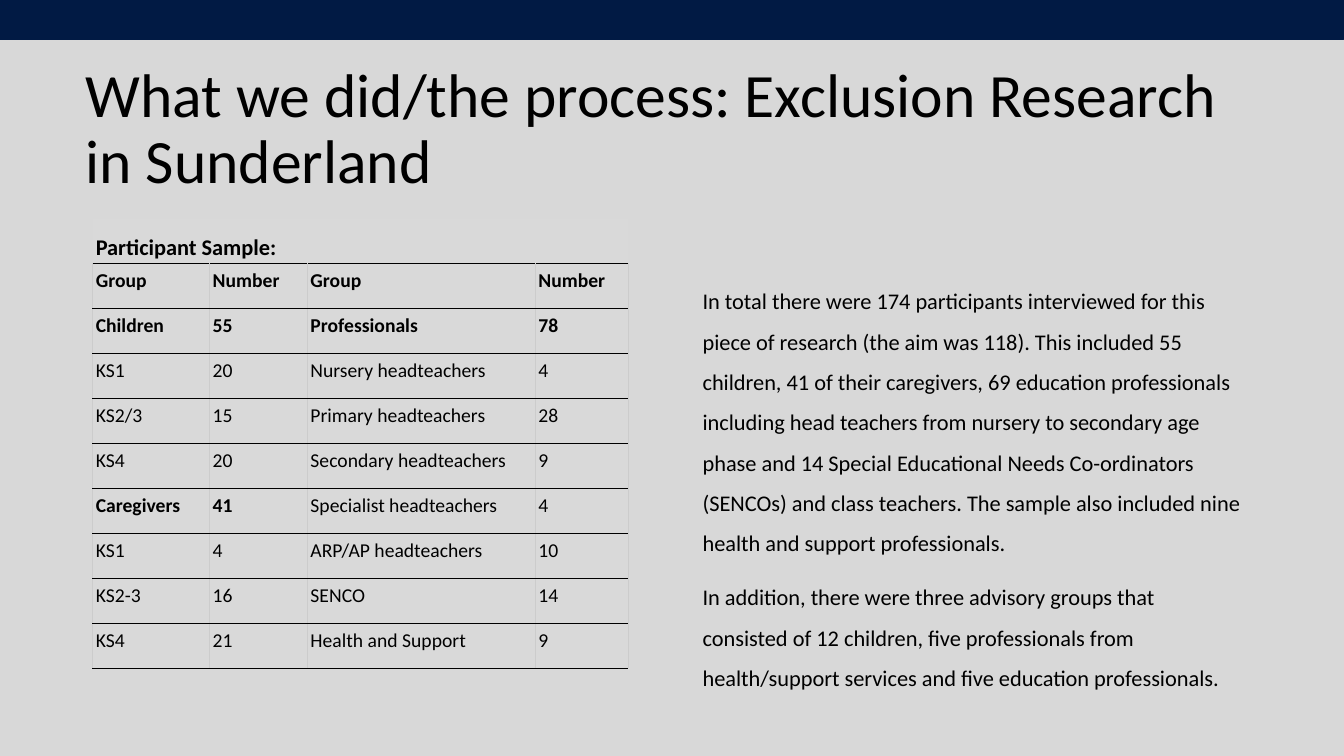
from lxml.etree import SubElement
from pptx import Presentation
from pptx.dml.color import RGBColor
from pptx.enum.shapes import MSO_SHAPE as Preset
from pptx.enum.text import MSO_ANCHOR as Anchor
from pptx.oxml import parse_xml
from pptx.oxml.ns import nsdecls, qn
from pptx.util import Inches, Pt

NAVY = RGBColor(0x01, 0x1A, 0x44)
BLACK = RGBColor(0x00, 0x00, 0x00)
PAGE_GREY = RGBColor(0xD8, 0xD8, 0xD8)
CELL_GREY = RGBColor(0xD9, 0xD9, 0xD9)
RULE_GREY = RGBColor(0xCC, 0xCC, 0xCC)
FONT = "Calibri"
PLAIN_STYLE = "{2D5ABB26-0587-4C30-8999-92F81FD0307C}"

TITLE = "What we did/the process: Exclusion Research in Sunderland"
SAMPLE_HEADING = "Participant Sample:"
SAMPLE_ROWS = [
    ("Group", "Number", "Group", "Number"),
    ("Children", "55", "Professionals", "78"),
    ("KS1", "20", "Nursery headteachers", "4"),
    ("KS2/3", "15", "Primary headteachers", "28"),
    ("KS4", "20", "Secondary headteachers", "9"),
    ("Caregivers", "41", "Specialist headteachers", "4"),
    ("KS1", "4", "ARP/AP headteachers", "10"),
    ("KS2-3", "16", "SENCO", "14"),
    ("KS4", "21", "Health and Support", "9"),
]
BOLD_WORDS = {"Group", "Number", "Children", "55", "Professionals", "78", "Caregivers", "41"}
COLUMN_WIDTHS = (1.16, 0.97, 2.26, 0.92)
SUMMARY = (
    "In total there were 174 participants interviewed for this piece of research "
    "(the aim was 118). This included 55 children, 41 of their caregivers, 69 education "
    "professionals including head teachers from nursery to secondary age phase and 14 "
    "Special Educational Needs Co-ordinators (SENCOs) and class teachers. The sample also "
    "included nine health and support professionals."
)
ADVISORY = (
    "In addition, there were three advisory groups that consisted of 12 children, five "
    "professionals from health/support services and five education professionals."
)


def write(para, text, size, spacing, bold=False, before=0, after=0):
    """Add one formatted run to a paragraph."""
    para.line_spacing = spacing
    para.space_before, para.space_after = Pt(before), Pt(after)
    span = para.add_run()
    span.text = text
    span.font.name, span.font.size, span.font.bold = FONT, Pt(size), bold
    span.font.color.rgb = BLACK


def add_text_frame(page, box, side, top, anchor=Anchor.TOP):
    """Add a wrapping text box and return its frame."""
    frame = page.shapes.add_textbox(*map(Inches, box)).text_frame
    frame.word_wrap = True
    frame.vertical_anchor = anchor
    frame.margin_left = frame.margin_right = Inches(side)
    frame.margin_top = frame.margin_bottom = Inches(top)
    return frame


def add_title(page, box):
    """Place the slide title in its box."""
    frame = add_text_frame(page, box, 0.1, 0.05, Anchor.MIDDLE)
    write(frame.paragraphs[0], TITLE, 44, 0.9)


def set_borders(cell, colours):
    """Draw the left, right, top and bottom cell borders; None leaves a side open."""
    properties = cell._tc.get_or_add_tcPr()
    for place, (side, colour) in enumerate(zip("LRTB", colours)):
        line = parse_xml(f'<a:ln{side} {nsdecls("a")} w="9525"/>')
        if colour is None:
            SubElement(line, qn("a:noFill"))
        else:
            fill = SubElement(line, qn("a:solidFill"))
            SubElement(fill, qn("a:srgbClr"), val=str(colour))
        properties.insert(place, line)


def style_cell(cell, borders):
    """Give a table cell its fill, margins and borders."""
    cell.fill.solid()
    cell.fill.fore_color.rgb = CELL_GREY
    cell.margin_left = cell.margin_right = Inches(0.03)
    cell.margin_top = cell.margin_bottom = Inches(0.02)
    set_borders(cell, borders)


def add_sample_table(page, box):
    """Place the participant table with its heading row in the box."""
    row_count = len(SAMPLE_ROWS) + 1
    table = page.shapes.add_table(row_count, len(COLUMN_WIDTHS), *map(Inches, box)).table
    table.first_row = table.horz_banding = False
    table._tbl.tblPr.find(qn("a:tableStyleId")).text = PLAIN_STYLE
    for column, width in zip(table.columns, COLUMN_WIDTHS):
        column.width = Inches(width)
    for row in table.rows:
        row.height = Inches(box[3] / row_count)
    heading = table.cell(0, 0)
    heading.merge(table.cell(0, len(COLUMN_WIDTHS) - 1))
    for cell in table.rows[0].cells:
        style_cell(cell, (None, None, None, BLACK))
    write(heading.text_frame.paragraphs[0], SAMPLE_HEADING, 16, 1.5, True, after=10)
    for number, words in enumerate(SAMPLE_ROWS, 1):
        for cell, word in zip(table.rows[number].cells, words):
            style_cell(cell, (RULE_GREY, RULE_GREY, BLACK, BLACK))
            write(cell.text_frame.paragraphs[0], word, 14, 1.15, word in BOLD_WORDS)


def add_summary(page, box):
    """Place the two summary paragraphs in the box."""
    frame = add_text_frame(page, box, 0.1, 0.1)
    write(frame.paragraphs[0], SUMMARY, 16, 1.5)
    write(frame.add_paragraph(), ADVISORY, 16, 1.5, before=10, after=10)


def add_top_band(page, box):
    """Draw the navy band in the box."""
    band = page.shapes.add_shape(Preset.RECTANGLE, *map(Inches, box))
    band.shadow.inherit = False
    band.fill.solid()
    band.fill.fore_color.rgb = NAVY
    band.line.color.rgb = NAVY
    band.line.width = Pt(0.75)


def main():
    """Build and save the one-slide deck."""
    deck = Presentation()
    deck.slide_width, deck.slide_height = Inches(13.33), Inches(7.5)
    page = deck.slides.add_slide(deck.slide_layouts[6])
    page.background.fill.solid()
    page.background.fill.fore_color.rgb = PAGE_GREY
    add_title(page, (0.75, 0.57, 11.99, 1.45))
    add_sample_table(page, (0.92, 2.17, 5.31, 4.46))
    add_summary(page, (6.87, 2.62, 5.54, 4.15))
    add_top_band(page, (0, 0, 13.33, 0.39))
    deck.save("out.pptx")


if __name__ == "__main__":
    main()
